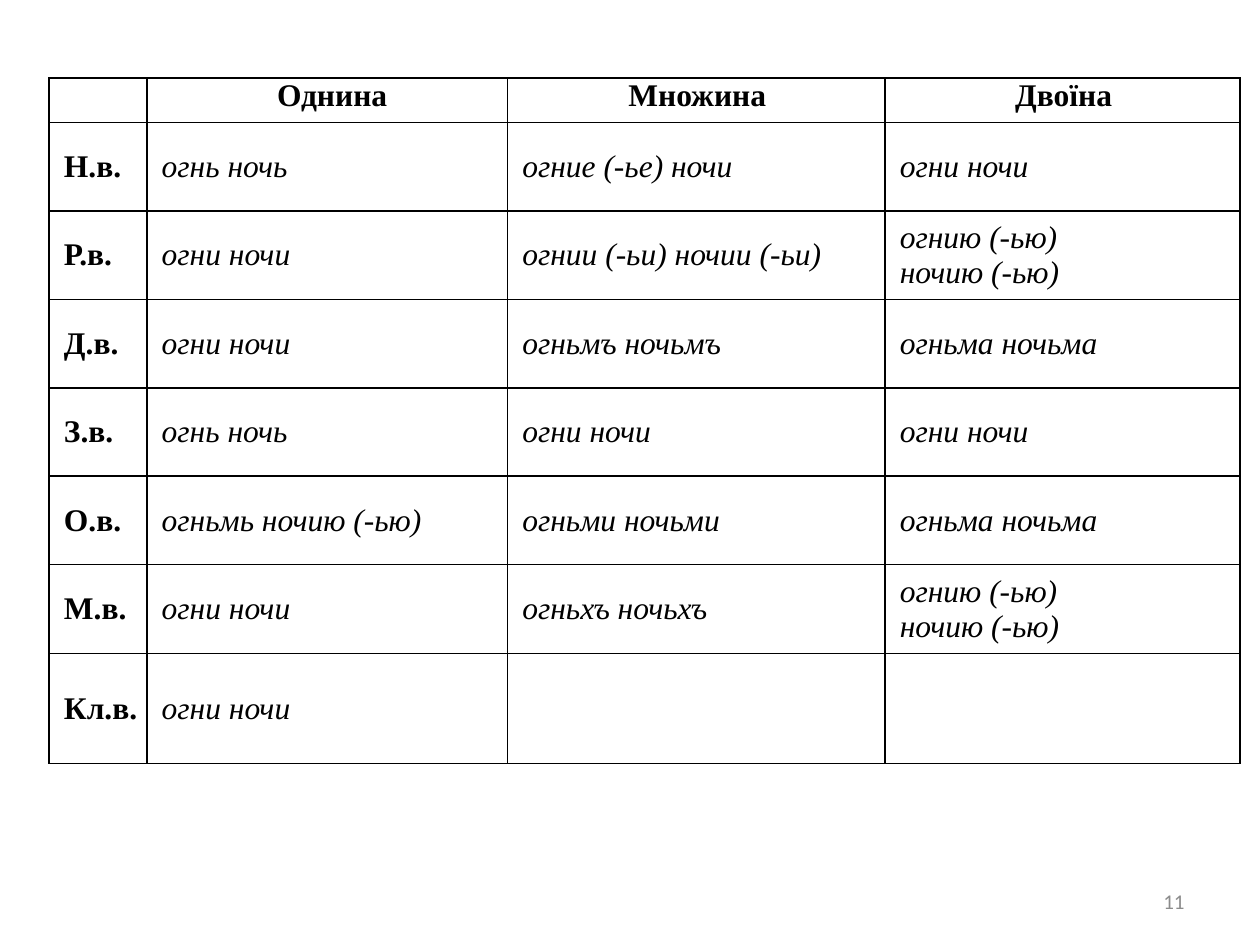
from lxml import etree
from pptx import Presentation
from pptx.dml.color import RGBColor
from pptx.enum.text import MSO_ANCHOR, PP_ALIGN
from pptx.oxml.ns import qn
from pptx.util import Cm, Pt

BLACK = RGBColor(0x00, 0x00, 0x00)
GREY = RGBColor(0x8C, 0x8C, 0x8C)
CENTER, LEFT, RIGHT = PP_ALIGN.CENTER, PP_ALIGN.LEFT, PP_ALIGN.RIGHT
TOP, MIDDLE = MSO_ANCHOR.TOP, MSO_ANCHOR.MIDDLE

COLUMN_WIDTHS = [1.97, 7.27, 7.61, 7.16]
ROW_HEIGHTS = [0.9, 1.78, 1.79, 1.78, 1.78, 1.78, 1.79, 2.22]
DECLENSION = [
    ["", "Однина", "Множина ", "Двоїна "],
    ["Н.в.", "огнь ночь", "огние (-ье) ночи", "огни ночи"],
    ["Р.в.", "огни ночи", "огнии (-ьи) ночии (-ьи)", "огнию (-ью)\nночию (-ью)"],
    ["Д.в.", "огни ночи", "огньмъ ночьмъ", "огньма ночьма"],
    ["З.в.", "огнь ночь", "огни ночи", "огни ночи"],
    ["О.в.", "огньмь ночию (-ью)", "огньми ночьми", "огньма ночьма"],
    ["М.в.", "огни ночи", "огньхъ ночьхъ", "огнию (-ью)\nночию (-ью)"],
    ["Кл.в.", "огни ночи", "", ""],
]


def style_font(font, name, size, color):
    font.name = name
    font.size = Pt(size)
    font.color.rgb = color


def add_borders(cell):
    properties = cell._tc.get_or_add_tcPr()
    for side in ("a:lnL", "a:lnR", "a:lnT", "a:lnB"):
        line = etree.SubElement(properties, qn(side), w=str(Pt(1)))
        fill = etree.SubElement(line, qn("a:solidFill"))
        etree.SubElement(fill, qn("a:srgbClr"), val=str(BLACK))


def fill_cell(cell, text, is_header, is_label):
    add_borders(cell)
    cell.fill.background()
    cell.margin_left = cell.margin_right = Cm(0.1)
    cell.margin_top = cell.margin_bottom = 0
    cell.vertical_anchor = TOP if is_header else MIDDLE
    cell.text = text
    for paragraph in cell.text_frame.paragraphs:
        paragraph.alignment = CENTER if is_header else LEFT
        paragraph._p.get_or_add_pPr().set("marL", str(Cm(0.2)))
        style_font(paragraph.font, "Times New Roman", 18, BLACK)
        paragraph.font.bold = is_header or is_label
        paragraph.font.italic = not (is_header or is_label)


def add_declension_table(slide):
    shape = slide.shapes.add_table(
        len(ROW_HEIGHTS), len(COLUMN_WIDTHS), Cm(0.99), Cm(1.57),
        Cm(sum(COLUMN_WIDTHS)), Cm(sum(ROW_HEIGHTS)))
    table = shape.table
    table.first_row = table.horz_banding = False
    for column, width in zip(table.columns, COLUMN_WIDTHS):
        column.width = Cm(width)
    for row, height in zip(table.rows, ROW_HEIGHTS):
        row.height = Cm(height)
    for row_index, texts in enumerate(DECLENSION):
        for column_index, text in enumerate(texts):
            fill_cell(table.cell(row_index, column_index), text,
                      row_index == 0, column_index == 0)


def add_page_number(slide, number):
    text_frame = slide.shapes.add_textbox(
        Cm(18.21), Cm(17.65), Cm(5.92), Cm(1.02)).text_frame
    text_frame.word_wrap = True
    text_frame.vertical_anchor = MIDDLE
    paragraph = text_frame.paragraphs[0]
    paragraph.text = number
    paragraph.alignment = RIGHT
    style_font(paragraph.font, "Calibri", 12, GREY)


def main():
    """Build the declension table slide."""
    presentation = Presentation()
    presentation.slide_width = Cm(25.4)
    presentation.slide_height = Cm(19.05)
    slide = presentation.slides.add_slide(presentation.slide_layouts[6])
    add_page_number(slide, "11")
    add_declension_table(slide)
    presentation.save("out.pptx")


if __name__ == "__main__":
    main()
